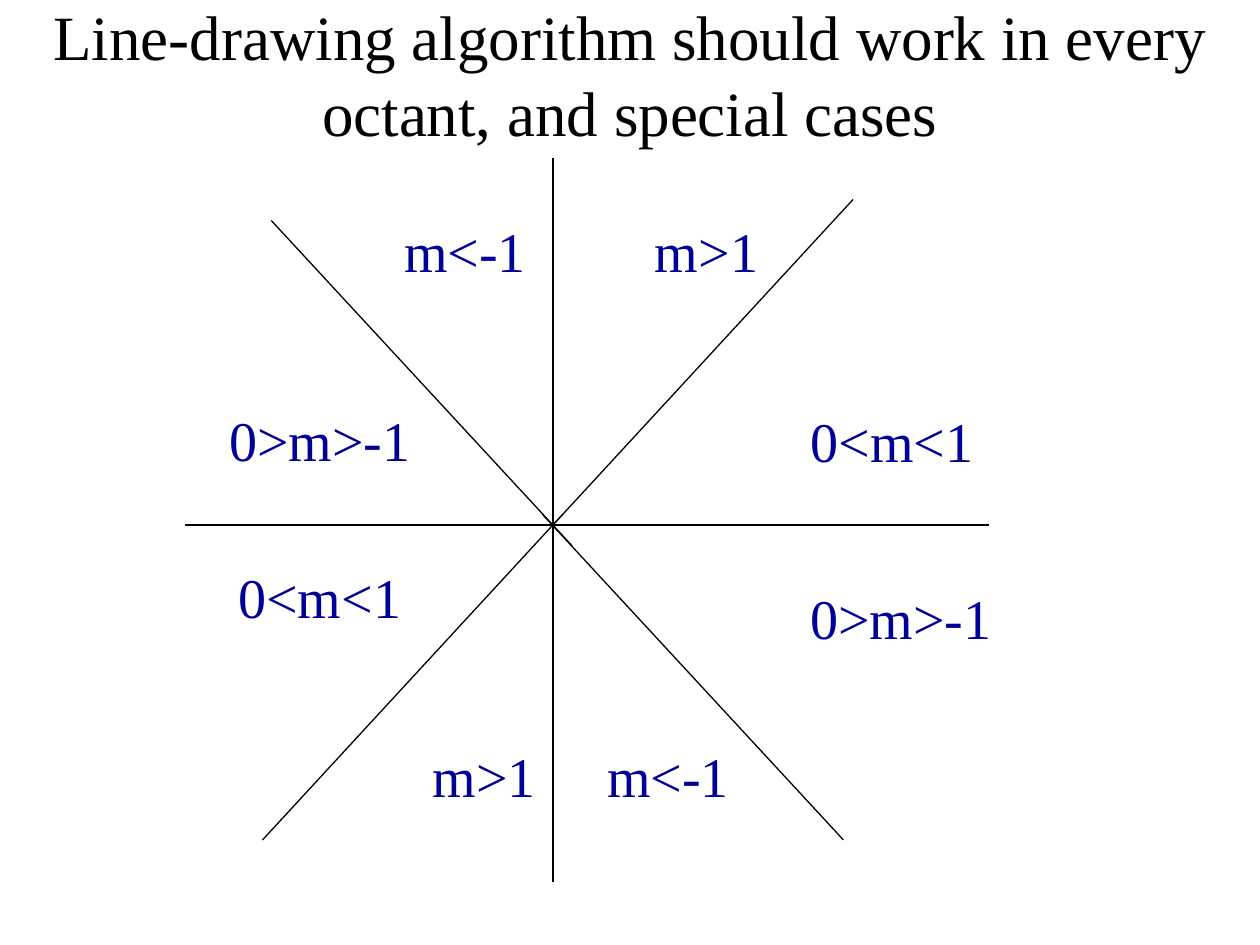
from pptx import Presentation, util as u
from pptx.dml.color import RGBColor
from pptx.enum import shapes, text
from pptx.oxml.ns import qn
from lxml import etree

Pt = u.Pt
INK = {"line": "000000", "label": "000099"}
FACE = "Times New Roman"


def write(box, words, size, ink):
    frame = box.text_frame
    frame.word_wrap = True
    frame.auto_size = text.MSO_AUTO_SIZE.NONE
    frame.vertical_anchor = text.MSO_ANCHOR.MIDDLE
    para = frame.paragraphs[0]
    para.text = words
    para.alignment = text.PP_ALIGN.CENTER
    para.font.name = FACE
    para.font.size = Pt(size)
    para.font.color.rgb = RGBColor.from_string(INK[ink])


deck = Presentation()
deck.slide_width, deck.slide_height = Pt(720), Pt(540)
slide = deck.slides.add_slide(deck.slide_layouts[5])

title = slide.shapes.title
title.left, title.top, title.width, title.height = Pt(0), Pt(-5), Pt(720), Pt(93.6)
write(title, "Line-drawing algorithm should work in every octant, and special cases", 36, "line")

lines = [
    (316, 90, 316, 504),
    (105.5, 300, 565, 300),
    (316, 300, 487.5, 114),
    (150, 480, 321.5, 294),
    (327, 312, 155, 126),
    (482, 480, 310, 294),
]
for ends in lines:
    line = slide.shapes.add_connector(shapes.MSO_CONNECTOR.STRAIGHT, *map(Pt, ends))
    line.line.width = Pt(0.75)
    line.line.color.rgb = RGBColor.from_string(INK["line"])
    etree.SubElement(line._element.spPr, qn("a:effectLst"))

labels = [
    ("0<m<1", 388, 229),
    ("0>m>-1", 393, 330),
    ("m>1", 282, 120),
    ("m>1", 155, 420),
    ("0<m<1", 61, 318),
    ("0>m>-1", 61, 228),
    ("m<-1", 260, 420),
    ("m<-1", 144, 120),
]
for words, left, top in labels:
    box = slide.shapes.add_textbox(Pt(left), Pt(top), Pt(243.6), Pt(45.4))
    write(box, words, 32, "label")

deck.save("out.pptx")
